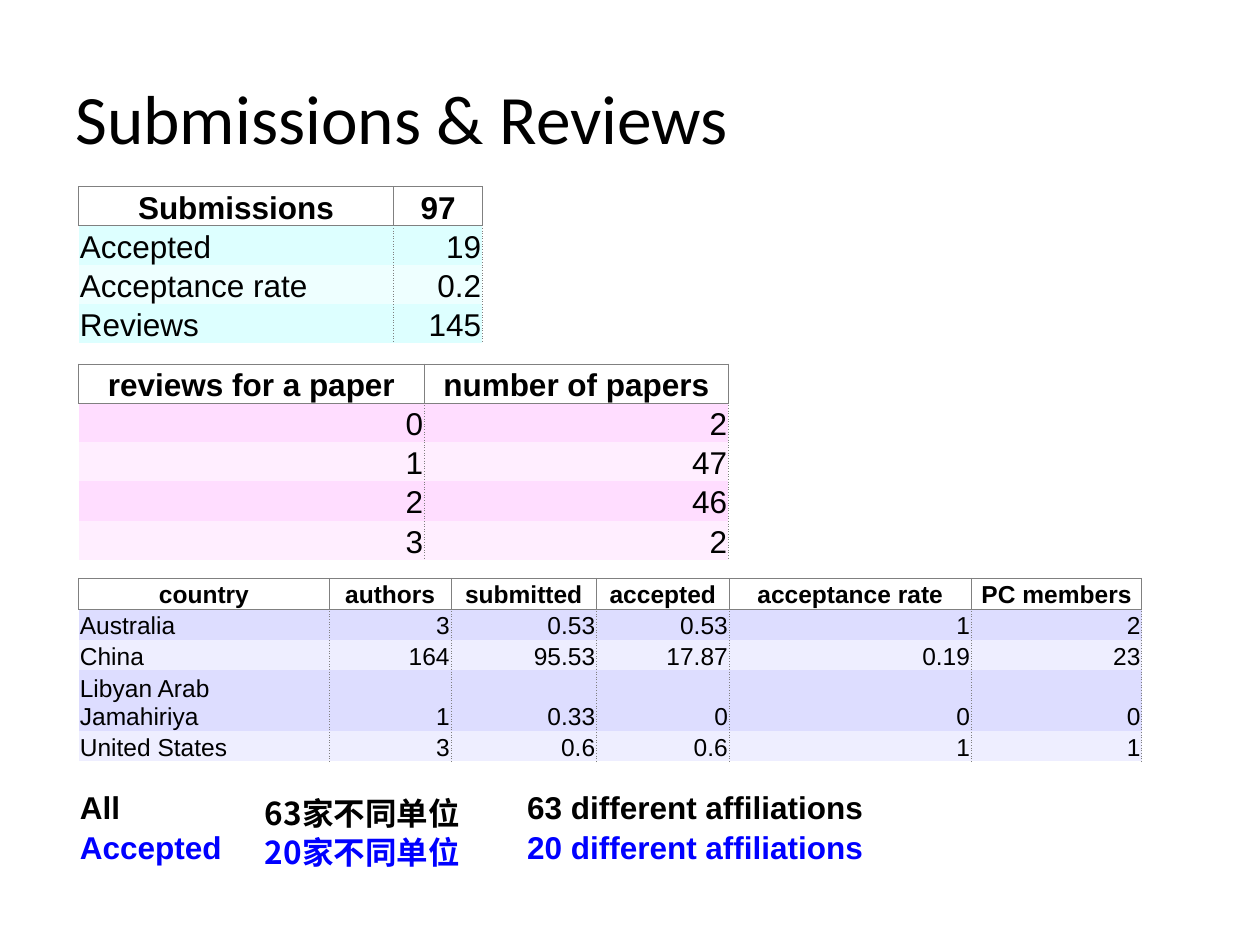
from pptx import Presentation
from pptx.dml.color import RGBColor
from pptx.enum.text import MSO_ANCHOR, PP_ALIGN
from pptx.oxml.ns import qn
from pptx.util import Pt
from lxml.etree import SubElement

HUES = {
    "ink": "000000", "blue": "0000FF", "rule": "808080",
    "aqua": "DDFFFF", "pale aqua": "EEFFFF",
    "pink": "FFDDFF", "pale pink": "FFEEFF",
    "mauve": "DDDDFF", "pale mauve": "EEEEFF",
}
LEFT = 44.9
SIDES = "LRTB"


class Deck:
    font = "Arial"
    wide = "Noto Sans CJK SC"

    def __init__(self):
        self.file = Presentation()
        self.file.slide_width, self.file.slide_height = Pt(720), Pt(540)
        self.slide = self.file.slides.add_slide(self.file.slide_layouts[6])

    def run(self, para, text, size, bold=False, hue="ink", font=None):
        run = para.add_run()
        run.text = text
        face = run.font
        face.size, face.bold, face.name = Pt(size), bold, font or self.font
        face.color.rgb = RGBColor.from_string(HUES[hue])
        if font == self.wide:
            SubElement(run._r.get_or_add_rPr(), qn("a:ea"), typeface=font)

    def title(self, text, left, top, width, height):
        box = self.slide.shapes.add_textbox(Pt(left), Pt(top), Pt(width), Pt(height))
        frame = box.text_frame
        frame.word_wrap = True
        frame.vertical_anchor = MSO_ANCHOR.MIDDLE
        self.run(frame.paragraphs[0], text, 39.6, font="Calibri")

    def edge(self, cell, lines):
        props = cell._tc.get_or_add_tcPr()
        for side in SIDES:
            dash = lines.get(side)
            line = SubElement(props, qn("a:ln" + side), w=str(Pt(0.5)))
            if dash:
                fill = SubElement(line, qn("a:solidFill"))
                SubElement(fill, qn("a:srgbClr"), val=HUES["rule"])
                SubElement(line, qn("a:prstDash"), val=dash)
            else:
                SubElement(line, qn("a:noFill"))

    def grid(self, top, cols, count, high):
        frame = self.slide.shapes.add_table(
            count, len(cols), Pt(LEFT), Pt(top), Pt(sum(cols)), Pt(high * count))
        table = frame.table
        table.first_row = table.horz_banding = False
        for col, width in zip(table.columns, cols):
            col.width = Pt(width)
        return table

    def cell(self, table, row, col, lines, hue=None):
        cell = table.cell(row, col)
        cell.margin_left = cell.margin_right = cell.margin_top = Pt(0.75)
        cell.margin_bottom = 0
        cell.vertical_anchor = MSO_ANCHOR.BOTTOM
        self.edge(cell, lines)
        if hue:
            cell.fill.solid()
            cell.fill.fore_color.rgb = RGBColor.from_string(HUES[hue])
        else:
            cell.fill.background()
        return cell.text_frame.paragraphs[0]

    def data(self, top, cols, rows, size, hue, names=True):
        table = self.grid(top, cols, len(rows), 13)
        for r, row in enumerate(rows):
            for c, text in enumerate(row):
                if r == 0:
                    lines, fill = dict.fromkeys(SIDES, "solid"), None
                    align = PP_ALIGN.CENTER
                else:
                    lines = {"R": "dot"}
                    if c:
                        lines["L"] = "dot"
                    if r == 1:
                        lines["T"] = "solid"
                    fill = hue if r % 2 else "pale " + hue
                    align = PP_ALIGN.LEFT if names and c == 0 else PP_ALIGN.RIGHT
                para = self.cell(table, r, c, lines, fill)
                para.alignment = align
                self.run(para, text, size, bold=r == 0)

    def notes(self, top, cols, rows):
        table = self.grid(top, cols, len(rows), 11.5)
        for r, (hue, *row) in enumerate(rows):
            for c, text in enumerate(row):
                para = self.cell(table, r, c, {})
                self.run(para, text, 18, True, hue, self.wide if c == 1 else None)


def main():
    deck = Deck()
    deck.title("Submissions & Reviews", 36, 21.6, 420, 90)
    deck.data(106.6, [180, 50.8], [
        ["Submissions", "97"],
        ["Accepted", "19"],
        ["Acceptance rate", "0.2"],
        ["Reviews", "145"],
    ], 18, "aqua")
    deck.data(208, [197.6, 173.8], [
        ["reviews for a paper", "number of papers"],
        ["0", "2"],
        ["1", "47"],
        ["2", "46"],
        ["3", "2"],
    ], 18, "pink", names=False)
    deck.data(330.4, [143.4, 69.4, 83.2, 75.8, 138.4, 97.4], [
        ["country", "authors", "submitted", "accepted", "acceptance rate", "PC members"],
        ["Australia", "3", "0.53", "0.53", "1", "2"],
        ["China", "164", "95.53", "17.87", "0.19", "23"],
        ["Libyan Arab Jamahiriya", "1", "0.33", "0", "0", "0"],
        ["United States", "3", "0.6", "0.6", "1", "1"],
    ], 14, "mauve")
    deck.notes(450, [105.8, 149.8, 222.5], [
        ["ink", "All", "63家不同单位", "63 different affiliations"],
        ["blue", "Accepted", "20家不同单位", "20 different affiliations"],
    ])
    deck.file.save("out.pptx")


if __name__ == "__main__":
    main()
